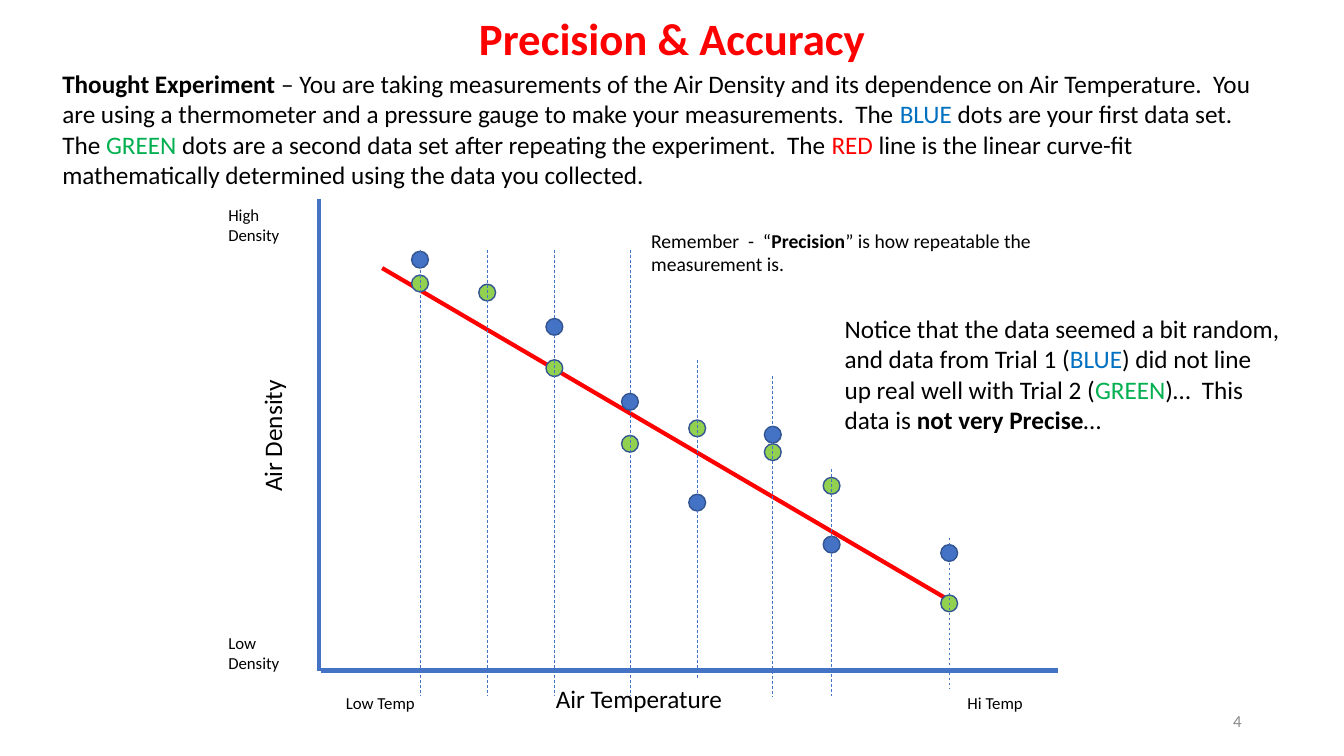
"""Build the Precision & Accuracy slide with its air density scatter diagram."""
from lxml.etree import SubElement
from pptx import Presentation
from pptx.dml.color import RGBColor
from pptx.enum.dml import MSO_LINE
from pptx.enum.shapes import MSO_CONNECTOR, MSO_SHAPE
from pptx.enum.text import MSO_ANCHOR, PP_ALIGN
from pptx.oxml.ns import qn
from pptx.util import Pt

BLACK = RGBColor(0x00, 0x00, 0x00)
GRAY = RGBColor(0x89, 0x89, 0x89)
RED = RGBColor(0xFF, 0x00, 0x00)
BLUE_TEXT = RGBColor(0x00, 0x70, 0xC0)
GREEN_TEXT = RGBColor(0x00, 0xB0, 0x50)
BLUE = RGBColor(0x44, 0x72, 0xC4)
GREEN = RGBColor(0x92, 0xD0, 0x50)
DOT_OUTLINE = RGBColor(0x32, 0x54, 0x91)

BOLD = {"bold": True}
BLUE_WORD = {"color": BLUE_TEXT}
GREEN_WORD = {"color": GREEN_TEXT}
RED_WORD = {"color": RED}

DOT_SIZE = 12
COLUMNS = [
    {"x": 72, "top": 36.5, "bottom": 355, "blue": 43.5, "green": 60.5},
    {"x": 120, "top": 36.5, "bottom": 355.5, "green": 67},
    {"x": 168, "top": 36.5, "bottom": 355.5, "blue": 91.5, "green": 121},
    {"x": 222, "top": 36.5, "bottom": 355, "blue": 145, "green": 175},
    {"x": 270, "top": 115, "bottom": 343.5, "blue": 217, "green": 164},
    {"x": 324, "top": 126.5, "bottom": 355.5, "blue": 168.5, "green": 181},
    {"x": 366, "top": 193, "bottom": 355, "blue": 247, "green": 205},
    {"x": 450, "top": 242, "bottom": 350, "blue": 253, "green": 289},
]
AXIS_LABELS = [
    ("Air Density", (-87.6, 148, 108, 28.8), 18, 270),
    ("Air Temperature", (162, 342.5, 198, 28.8), 18, 0),
    ("High Density", (-72, 0.5, 66, 36.5), 12, 0),
    ("Low Density", (-72, 306.5, 66, 36.5), 12, 0),
    ("Low Temp", (12, 349, 66, 21.6), 12, 0),
    ("Hi Temp", (456, 349.5, 66, 21.6), 12, 0),
]


def add_text(slide, box, runs, size, color=BLACK, align=PP_ALIGN.LEFT,
             anchor=MSO_ANCHOR.TOP, spacing=1.0):
    """Add a wrapped text box whose runs are (text, format) pairs."""
    shape = slide.shapes.add_textbox(*map(Pt, box))
    frame = shape.text_frame
    frame.word_wrap = True
    frame.vertical_anchor = anchor
    paragraph = frame.paragraphs[0]
    paragraph.alignment = align
    paragraph.line_spacing = spacing
    for text, style in runs:
        run = paragraph.add_run()
        run.text = text
        values = {"name": "Calibri", "size": Pt(size), "bold": style.get("bold", False)}
        for name, value in values.items():
            setattr(run.font, name, value)
        run.font.color.rgb = style.get("color", color)
    return shape


def add_line(slide, start, end, color, width, dash=None):
    """Add a straight line without a shadow."""
    line = slide.shapes.add_connector(MSO_CONNECTOR.STRAIGHT, *map(Pt, start + end))
    line.line.color.rgb = color
    line.line.width = Pt(width)
    line.line.dash_style = dash
    SubElement(line._element.spPr, qn("a:effectLst"))


def add_dot(slide, x, y, color):
    """Add a data point centred on x and y."""
    corner = (x - DOT_SIZE / 2, y - DOT_SIZE / 2)
    dot = slide.shapes.add_shape(MSO_SHAPE.OVAL, *map(Pt, corner + (DOT_SIZE, DOT_SIZE)))
    dot.shadow.inherit = False
    dot.fill.solid()
    dot.fill.fore_color.rgb = color
    dot.line.color.rgb = DOT_OUTLINE
    dot.line.width = Pt(1)


def add_diagram(slide, left, top, width, height):
    """Draw the axes, labels, curve-fit line and both data sets."""
    corner = (left, top + height)
    add_line(slide, (left, top), corner, BLUE, 3)
    add_line(slide, (left + 1, top + height), (left + width, top + height), BLUE, 3)
    for text, (x, y, label_width, label_height), size, rotation in AXIS_LABELS:
        box = (left + x, top + y, label_width, label_height)
        add_text(slide, box, [(text, {})], size).rotation = rotation
    add_line(slide, (left + 45, top + 49.5), (left + 453, top + 288.5), RED, 3)
    for series, color in (("blue", BLUE), ("green", GREEN)):
        for column in COLUMNS:
            if series in column:
                add_dot(slide, left + column["x"], top + column[series], color)
    for column in COLUMNS:
        x = left + column["x"]
        add_line(slide, (x, top + column["top"]), (x, top + column["bottom"]),
                 BLUE, 0.5, MSO_LINE.DASH)


def add_heading(slide, left, top, width, height):
    """Write the title and the thought experiment below it."""
    add_text(slide, (left + 118.8, top, 648, 44.6), [("Precision & Accuracy", BOLD)], 32,
             RED, PP_ALIGN.CENTER, MSO_ANCHOR.MIDDLE, 0.9)
    add_text(slide, (left, top + 38.2, width, height - 38.2), [
        ("Thought Experiment ", BOLD),
        ("– You are taking measurements of the Air Density and its dependence on Air "
         "Temperature.  You are using a thermometer and a pressure gauge to make your "
         "measurements.  The ", {}),
        ("BLUE", BLUE_WORD),
        (" dots are your first data set.  The ", {}),
        ("GREEN", GREEN_WORD),
        (" dots are a second data set after repeating the experiment.  The ", {}),
        ("RED", RED_WORD),
        (" line is the linear curve-fit mathematically determined using the data you "
         "collected.", {}),
    ], 18)


def add_remarks(slide, left, top, width, height):
    """Write the reminder and the remark on precision beside the data."""
    add_text(slide, (left, top, 287.3, 41), [
        ("Remember  -  “", {}),
        ("Precision", BOLD),
        ("” is how repeatable the measurement is.", {}),
    ], 14)
    add_text(slide, (left + 138.2, top + 60.5, width - 138.2, height - 60.5), [
        ("Notice that the data seemed a bit random, and data from Trial 1 (", {}),
        ("BLUE", BLUE_WORD),
        (") did not line up real well with Trial 2 (", {}),
        ("GREEN", GREEN_WORD),
        (")…  This data is ", {}),
        ("not very Precise", BOLD),
        ("…", {}),
    ], 18)


def main():
    """Build and save the presentation."""
    presentation = Presentation()
    presentation.slide_width = Pt(960)
    presentation.slide_height = Pt(540)
    slide = presentation.slides.add_slide(presentation.slide_layouts[6])
    add_diagram(slide, 228, 142, 528, 337)
    add_heading(slide, 37.4, 7.2, 879.1, 132.5)
    add_remarks(slide, 458, 159.8, 464.4, 154.8)
    add_text(slide, (678, 500.4, 216, 28.8), [("4", {})], 12, GRAY,
             PP_ALIGN.RIGHT, MSO_ANCHOR.MIDDLE)
    presentation.save("out.pptx")


if __name__ == "__main__":
    main()
